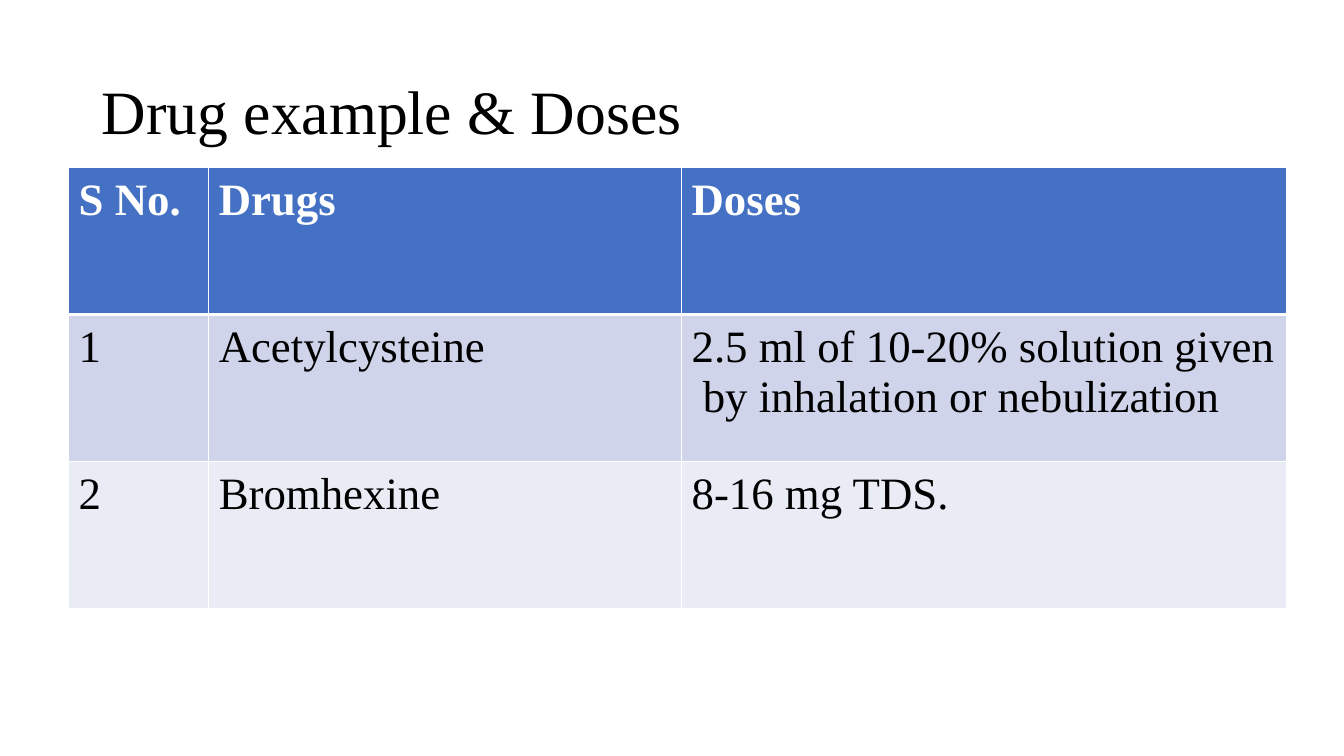
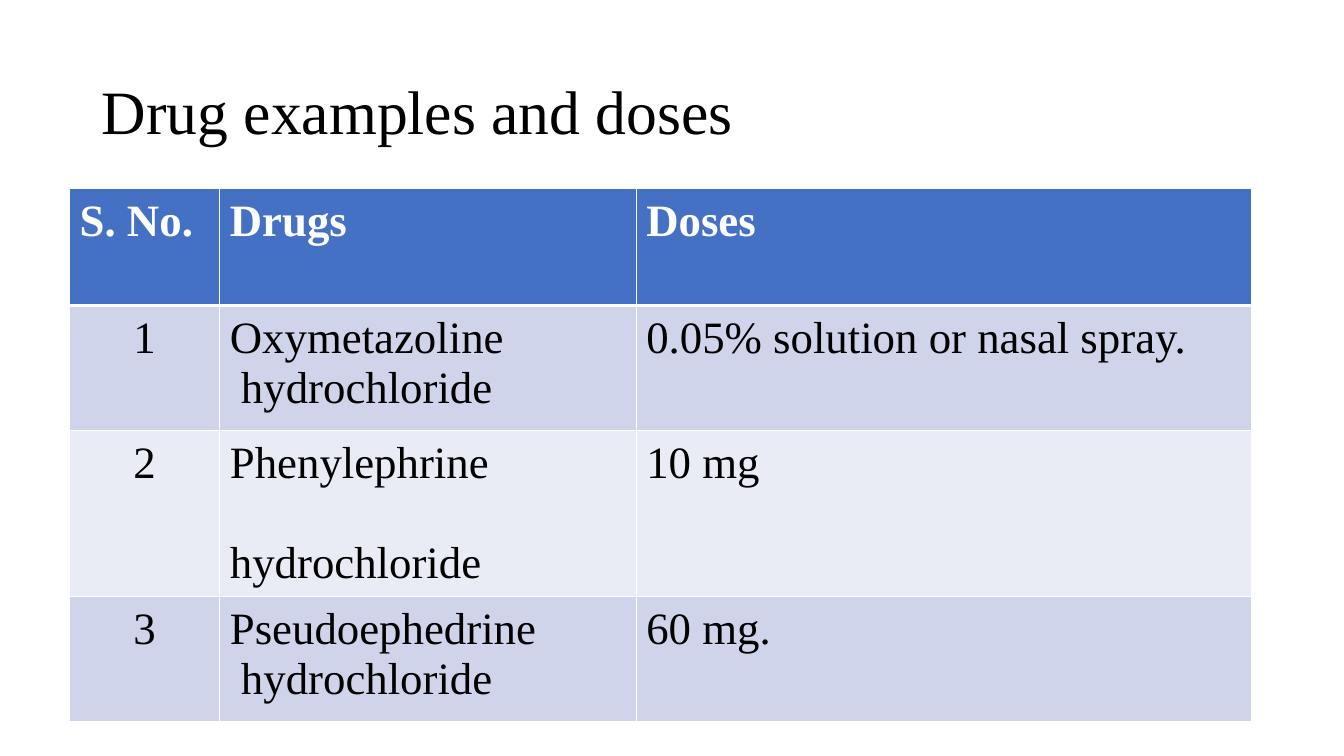
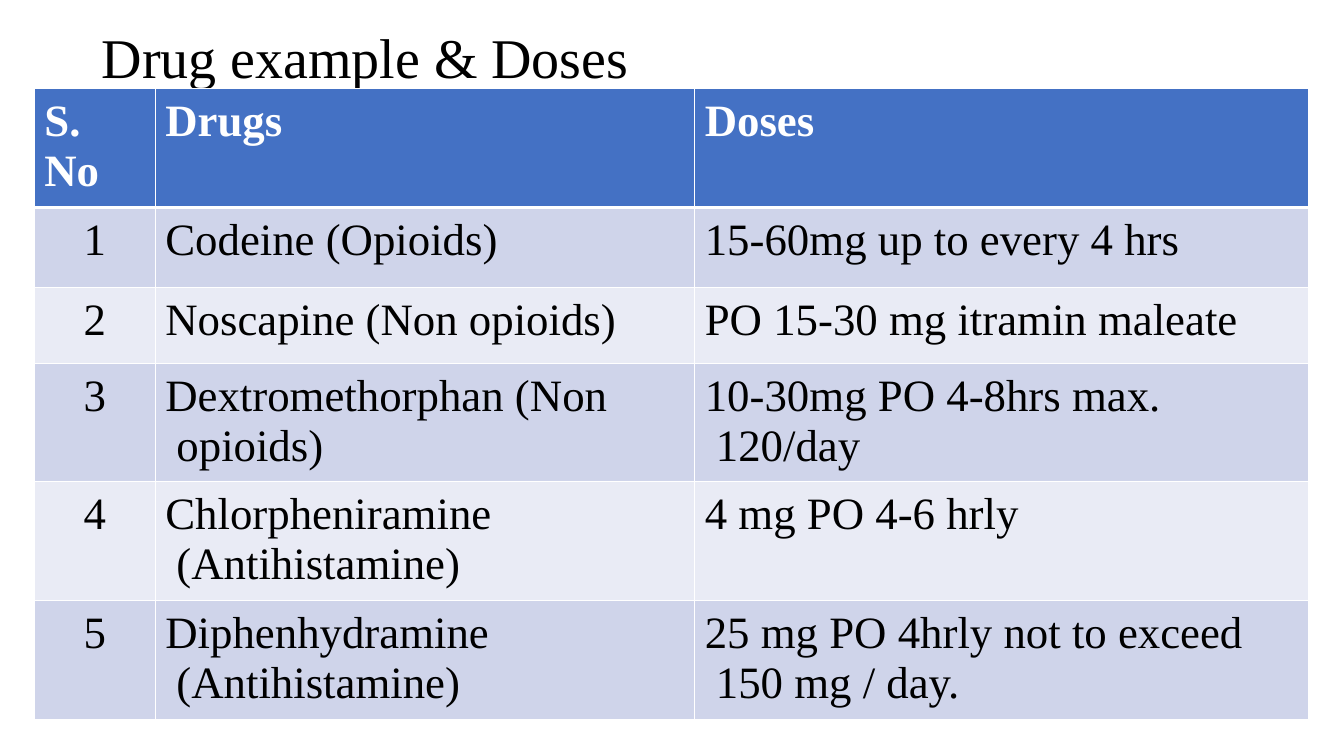
from dataclasses import dataclass

from lxml import etree
from pptx import Presentation
from pptx.dml.color import RGBColor
from pptx.enum.text import PP_ALIGN
from pptx.oxml.ns import qn
from pptx.util import Inches, Pt

LEFT, CENTER = PP_ALIGN.LEFT, PP_ALIGN.CENTER


@dataclass(frozen=True)
class Theme:
    font: str = "Times New Roman"
    ink: str = "000000"
    white: str = "FFFFFF"
    header: str = "4471C4"
    bands: tuple = ("CFD4EA", "E9EBF5")
    title_size: int = 44
    small_title_size: int = 40
    table_size: int = 32
    rule: int = 1
    header_rule: int = 3


T = Theme()


def write(tf, text, *, size, color=T.ink, bold=False, align=LEFT, hang=0, gap=0):
    for i, line in enumerate(text.split("\n")):
        p = tf.paragraphs[0] if i == 0 else tf.add_paragraph()
        p.alignment = align
        if i:
            p.space_before = Pt(gap)
        if hang:
            pPr = p._p.get_or_add_pPr()
            pPr.set("marL", str(Inches(hang)))
            pPr.set("indent", str(-Inches(hang)))
        r = p.add_run()
        r.text = line
        r.font.name = T.font
        r.font.size = Pt(size)
        r.font.bold = bold
        r.font.color.rgb = RGBColor.from_string(color)


def set_borders(cell, top, bottom):
    tcPr = cell._tc.get_or_add_tcPr()
    for side, width in (("L", T.rule), ("R", T.rule), ("T", top), ("B", bottom)):
        ln = etree.SubElement(tcPr, qn(f"a:ln{side}"), w=str(Pt(width)))
        fill = etree.SubElement(ln, qn("a:solidFill"))
        etree.SubElement(fill, qn("a:srgbClr"), val=T.white)


slides = [
    {
        "title": "Drug example & Doses",
        "title_at": (0.69, 5.9, 0.76), "title_size": T.title_size,
        "table_at": (0.68, 1.66),
        "cols": (1.39, 4.69, 6), "rows": (1.46, 1.46, 1.46),
        "number_align": LEFT, "hang": 0,
        "cells": [
            ("S No.", "Drugs", "Doses"),
            ("1", "Acetylcysteine",
             "2.5 ml of 10-20% solution given  by inhalation or nebulization"),
            ("2", "Bromhexine", "8-16 mg TDS."),
        ],
    },
    {
        "title": "Drug examples and doses",
        "title_at": (0.69, 6.4, 0.76), "title_size": T.title_size,
        "table_at": (0.69, 1.87),
        "cols": (1.49, 4.13, 6.1), "rows": (1.16, 1.24, 1.64, 1.24),
        "number_align": CENTER, "hang": 0.11,
        "cells": [
            ("S. No.", "Drugs", "Doses"),
            ("1", "Oxymetazoline hydrochloride", "0.05% solution or nasal spray."),
            ("2", "Phenylephrine\nhydrochloride", "10 mg"),
            ("3", "Pseudoephedrine hydrochloride", "60 mg."),
        ],
    },
    {
        "title": "Drug example & Doses",
        "title_at": (0.19, 5.4, 0.69), "title_size": T.small_title_size,
        "table_at": (0.34, 0.88),
        "cols": (1.2, 5.35, 6.09), "rows": (1.18, 0.79, 0.76, 1.17, 1.18, 1.18),
        "number_align": CENTER, "hang": 0.11,
        "cells": [
            ("S.\nNo", "Drugs", "Doses"),
            ("1", "Codeine (Opioids)", "15-60mg up to every 4 hrs"),
            ("2", "Noscapine (Non opioids)", "PO 15-30 mg itramin maleate"),
            ("3", "Dextromethorphan (Non opioids)", "10-30mg PO 4-8hrs max. 120/day"),
            ("4", "Chlorpheniramine (Antihistamine)", "4 mg PO 4-6 hrly"),
            ("5", "Diphenhydramine (Antihistamine)",
             "25 mg PO 4hrly not to exceed 150 mg / day."),
        ],
    },
]

prs = Presentation()
prs.slide_width, prs.slide_height = Inches(13.33), Inches(7.5)
blank = prs.slide_layouts[6]

for data in slides:
    s = prs.slides.add_slide(blank)

    top, width, height = data["title_at"]
    title = s.shapes.add_textbox(Inches(1), Inches(top), Inches(width), Inches(height))
    tf = title.text_frame
    tf.word_wrap = True
    tf.margin_left = Inches(0.01)
    tf.margin_top = Inches(0.03)
    tf.margin_right = tf.margin_bottom = 0
    write(tf, data["title"], size=data["title_size"])

    cols, rows = data["cols"], data["rows"]
    left, top = data["table_at"]
    table = s.shapes.add_table(
        len(rows), len(cols), Inches(left), Inches(top),
        Inches(sum(cols)), Inches(sum(rows))).table
    table.first_row = table.horz_banding = False
    for col, width in zip(table.columns, cols):
        col.width = Inches(width)
    for row, height in zip(table.rows, rows):
        row.height = Inches(height)

    for i, texts in enumerate(data["cells"]):
        is_header = i == 0
        fill = T.header if is_header else T.bands[(i - 1) % 2]
        for j, text in enumerate(texts):
            cell = table.cell(i, j)
            cell.margin_left = cell.margin_right = Inches(0.1)
            cell.margin_top, cell.margin_bottom = Inches(0.08), 0
            set_borders(cell,
                        T.header_rule if i == 1 else T.rule,
                        T.header_rule if is_header else T.rule)
            cell.fill.solid()
            cell.fill.fore_color.rgb = RGBColor.from_string(fill)
            is_number = j == 0 and not is_header
            write(cell.text_frame, text, size=T.table_size,
                  color=T.white if is_header else T.ink, bold=is_header,
                  align=data["number_align"] if is_number else LEFT,
                  hang=data["hang"] if j and "\n" not in text else 0,
                  gap=0 if is_header else 36)

prs.save("out.pptx")
